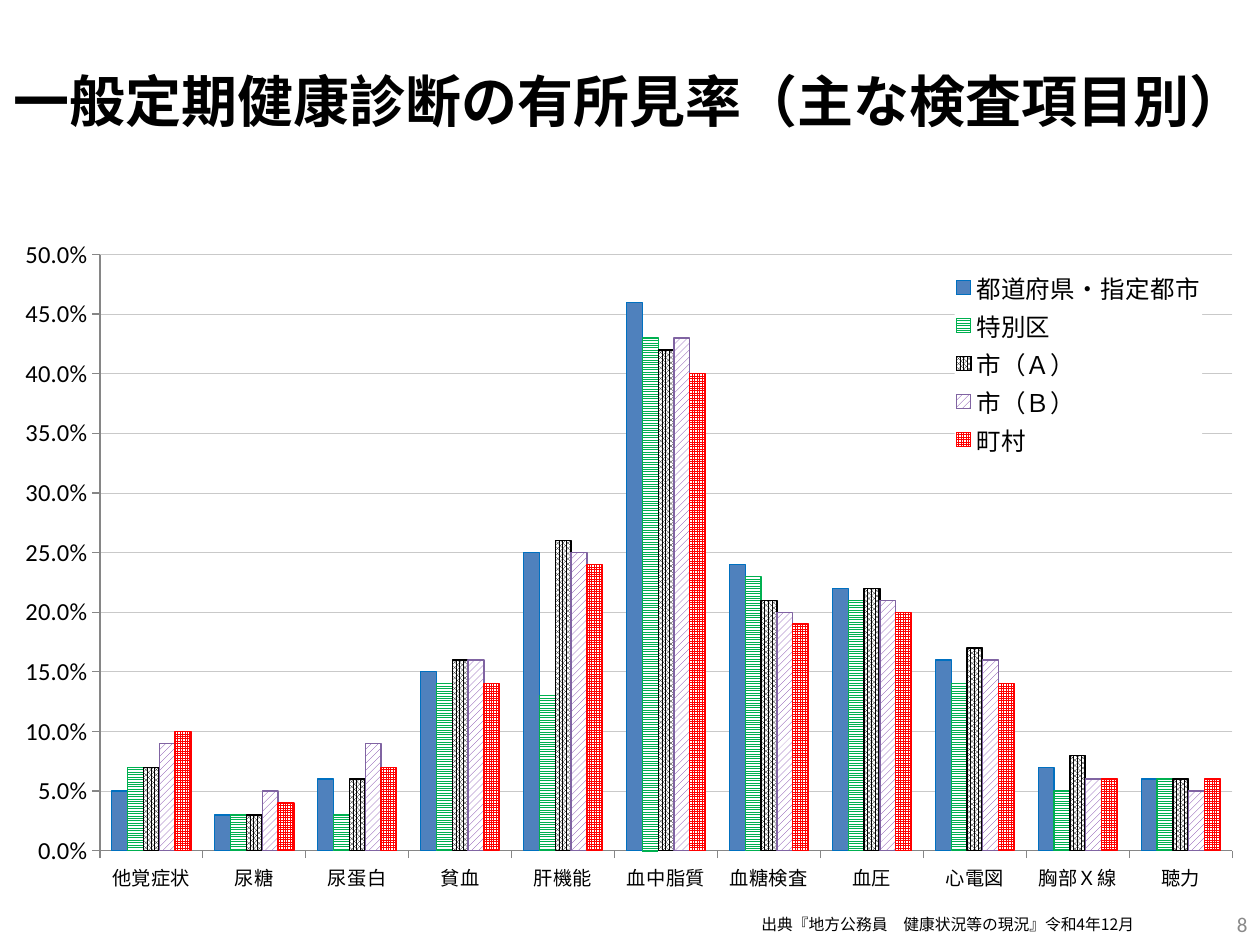
from lxml import etree
from pptx import Presentation, util as u
from pptx.chart.data import CategoryChartData
from pptx.dml.color import RGBColor
from pptx.enum import chart as charts, dml, text
from pptx.oxml import ns

PX = 914400 / 126
BLACK = RGBColor(0x00, 0x00, 0x00)
WHITE = RGBColor(0xFF, 0xFF, 0xFF)
GREY = RGBColor(0x89, 0x89, 0x89)
AXIS = RGBColor(0x86, 0x86, 0x86)
GRID = RGBColor(0xC9, 0xC9, 0xC9)
STEEL = RGBColor(0x4F, 0x81, 0xBD)
BLUE = RGBColor(0x00, 0x70, 0xC0)
GREEN = RGBColor(0x00, 0xB0, 0x50)
PURPLE = RGBColor(0x70, 0x30, 0xA0)
LILAC = RGBColor(0x80, 0x64, 0xA2)
RED = RGBColor(0xFF, 0x00, 0x00)
PATTERN = dml.MSO_PATTERN_TYPE

CHECKUPS = ["他覚症状", "尿糖", "尿蛋白", "貧血", "肝機能", "血中脂質",
            "血糖検査", "血圧", "心電図", "胸部Ｘ線", "聴力"]
GROUPS = [
    ("都道府県・指定都市", None, STEEL, BLUE,
     [0.05, 0.03, 0.06, 0.15, 0.25, 0.46, 0.24, 0.22, 0.16, 0.07, 0.06]),
    ("特別区", PATTERN.LIGHT_HORIZONTAL, GREEN, GREEN,
     [0.07, 0.03, 0.03, 0.14, 0.13, 0.43, 0.23, 0.21, 0.14, 0.05, 0.06]),
    ("市（Ａ）", PATTERN.PERCENT_80, BLACK, BLACK,
     [0.07, 0.03, 0.06, 0.16, 0.26, 0.42, 0.21, 0.22, 0.17, 0.08, 0.06]),
    ("市（Ｂ）", PATTERN.WIDE_UPWARD_DIAGONAL, PURPLE, LILAC,
     [0.09, 0.05, 0.09, 0.16, 0.25, 0.43, 0.2, 0.21, 0.16, 0.06, 0.05]),
    ("町村", PATTERN.SMALL_GRID, RED, RED,
     [0.1, 0.04, 0.07, 0.14, 0.24, 0.4, 0.19, 0.2, 0.14, 0.06, 0.06]),
]


def px(*lengths):
    """Turn px lengths into EMU."""
    return [u.Emu(round(length * PX)) for length in lengths]


def apply(target, **values):
    """Set each given attribute on the target."""
    for name, value in values.items():
        setattr(target, name, value)


def style_font(font, size, name, color=BLACK, bold=False):
    """Format a font."""
    apply(font, size=u.Pt(size), name=name, bold=bold)
    font.color.rgb = color


def style_line(line, color, width=0.75):
    """Format a line."""
    line.color.rgb = color
    line.width = u.Pt(width)


def fill_text(shape, box, words, align, size, name, color=BLACK, bold=False):
    """Place a shape and write one formatted paragraph in it."""
    apply(shape, **dict(zip(("left", "top", "width", "height"), px(*box))))
    frame = shape.text_frame
    apply(frame, word_wrap=True, auto_size=text.MSO_AUTO_SIZE.NONE,
          vertical_anchor=text.MSO_ANCHOR.MIDDLE)
    para = frame.paragraphs[0]
    para.alignment = align
    span = para.add_run()
    span.text = words
    style_font(span.font, size, name, color, bold)


def set_layout(element, index, fractions, inner=False):
    """Give a chart part a manual layout in fractions of the chart."""
    for old in element.findall(ns.qn("c:layout")):
        element.remove(old)
    layout = etree.Element(ns.qn("c:layout"))
    manual = etree.SubElement(layout, ns.qn("c:manualLayout"))
    settings = [("layoutTarget", "inner")] if inner else []
    settings += [("xMode", "edge"), ("yMode", "edge")]
    settings += zip("xywh", map(str, fractions))
    for tag, value in settings:
        etree.SubElement(manual, ns.qn("c:" + tag)).set("val", value)
    element.insert(index, layout)


def add_legend(chart, fractions):
    """Add a white legend on top of the plot."""
    chart.has_legend = True
    legend = chart.legend
    apply(legend, position=charts.XL_LEGEND_POSITION.RIGHT, include_in_layout=False)
    style_font(legend.font, 14, "Calibri")
    element = legend._element
    set_layout(element, 1, fractions)
    shape = etree.Element(ns.qn("c:spPr"))
    fill = etree.SubElement(shape, ns.qn("a:solidFill"))
    etree.SubElement(fill, ns.qn("a:srgbClr")).set("val", str(WHITE))
    element.find(ns.qn("c:txPr")).addprevious(shape)


def style_series(series, pattern, color, outline):
    """Fill the bars of one group, solid or patterned."""
    series.invert_if_negative = False
    fill = series.format.fill
    if pattern is None:
        fill.solid()
    else:
        fill.patterned()
        fill.pattern = pattern
        fill.back_color.rgb = WHITE
    fill.fore_color.rgb = color
    style_line(series.format.line, outline)


def add_rates_chart(page, box):
    """Draw the clustered columns of finding rates."""
    data = CategoryChartData(number_format="0.0%")
    data.categories = CHECKUPS
    for name, _, _, _, rates in GROUPS:
        data.add_series(name, rates)
    chart = page.shapes.add_chart(
        charts.XL_CHART_TYPE.COLUMN_CLUSTERED, *px(*box), data).chart
    chart.has_title = False
    style_font(chart.font, 18, "Calibri")
    plot = chart.plots[0]
    apply(plot, gap_width=150, overlap=0, vary_by_categories=False)
    for series, (_, pattern, color, outline, _) in zip(plot.series, GROUPS):
        style_series(series, pattern, color, outline)
    for axis, size in ((chart.category_axis, 11), (chart.value_axis, 14)):
        axis.major_tick_mark = charts.XL_TICK_MARK.OUTSIDE
        style_font(axis.tick_labels.font, size, "Calibri")
        style_line(axis.format.line, AXIS)
    scale = chart.value_axis
    apply(scale, minimum_scale=0, maximum_scale=0.5, major_unit=0.05,
          has_major_gridlines=True)
    style_line(scale.major_gridlines.format.line, GRID, 0.5)
    apply(scale.tick_labels, number_format="0.0%", number_format_is_linked=False)
    plot_area = chart._chartSpace.find(".//" + ns.qn("c:plotArea"))
    set_layout(plot_area, 0, (0.064, 0.031, 0.938, 0.898), inner=True)
    add_legend(chart, (0.77, 0.05, 0.205, 0.29))


def add_footer(page, box):
    """Write the source and the page number along the bottom."""
    left, top, width, height = box
    align = text.PP_ALIGN
    source = page.shapes.add_textbox(0, 0, 0, 0)
    fill_text(source, (left, top, 425, height),
              "出典『地方公務員　健康状況等の現況』令和4年12月",
              align.LEFT, 9, "Noto Sans CJK JP")
    number = page.shapes.add_textbox(0, 0, 0, 0)
    fill_text(number, (left + width - 294, top, 294, height), "8",
              align.RIGHT, 12, "Calibri", GREY)


def main():
    """Build the slide and save it."""
    deck = Presentation()
    deck.slide_width, deck.slide_height = px(1260, 945)
    page = deck.slides.add_slide(deck.slide_layouts[5])
    fill_text(page.shapes.title, (0, 36, 1260, 129),
              "一般定期健康診断の有所見率（主な検査項目別）",
              text.PP_ALIGN.CENTER, 32, "Arial", bold=True)
    add_rates_chart(page, (25, 234, 1208, 664))
    add_footer(page, (749, 899, 511, 50))
    deck.save("out.pptx")


if __name__ == "__main__":
    main()
